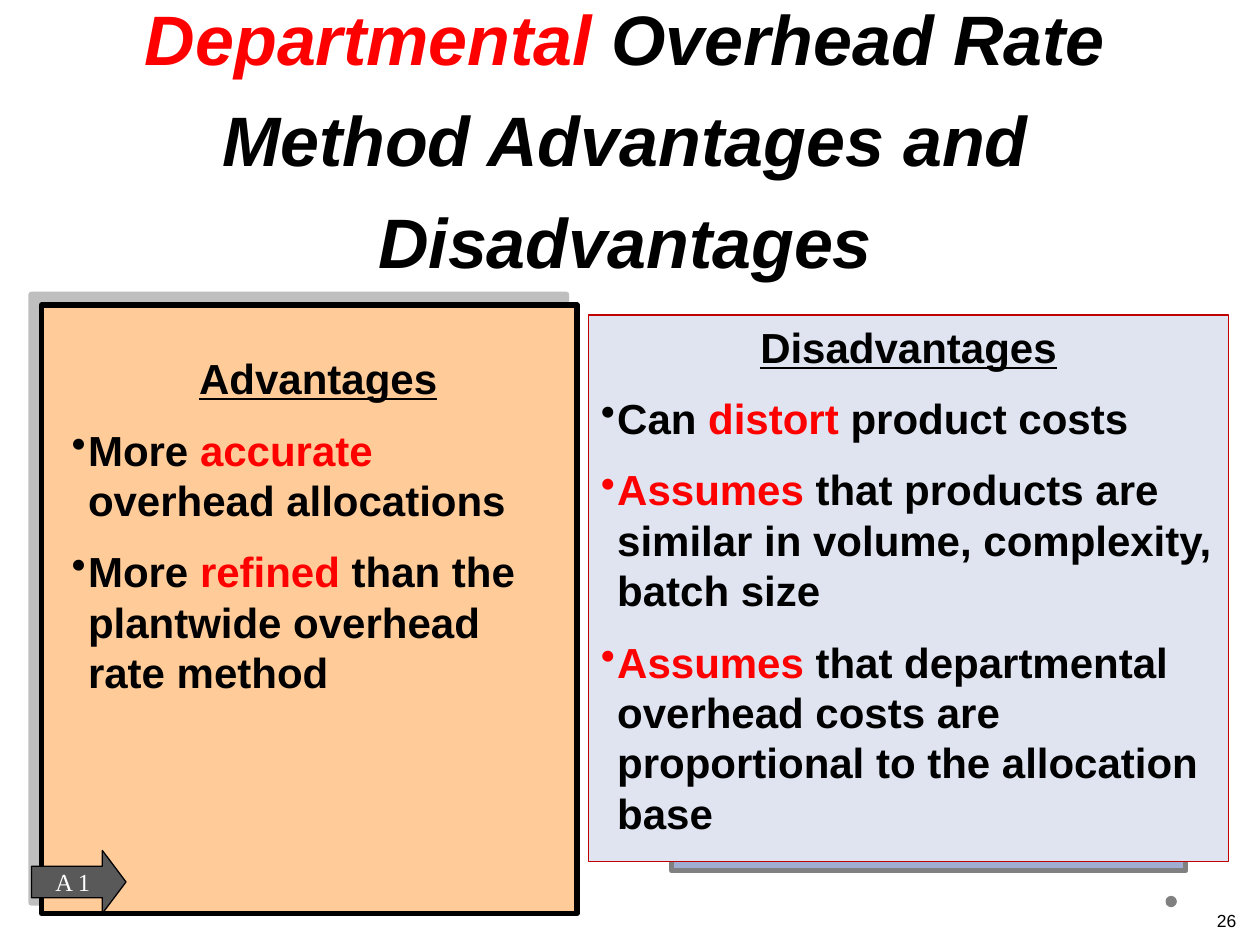
import pptx
import pptx.util
import pptx.dml.color
import pptx.enum.shapes
import pptx.enum.text
import pptx.oxml
import pptx.oxml.ns

Inches = pptx.util.Inches
Pt = pptx.util.Pt
RGBColor = pptx.dml.color.RGBColor
Shape = pptx.enum.shapes.MSO_SHAPE
Align = pptx.enum.text.PP_ALIGN
Anchor = pptx.enum.text.MSO_ANCHOR

BLACK = RGBColor(0, 0, 0)
WHITE = RGBColor(255, 255, 255)
RED = RGBColor(255, 0, 0)
GREY = RGBColor(0x80, 0x80, 0x80)
SLATE = RGBColor(0x59, 0x59, 0x59)
PEACH = RGBColor(0xFF, 0xCC, 0x99)
BLUE = RGBColor(0xA0, 0xAD, 0xD2)
PALE = RGBColor(0xDF, 0xE4, 0xF0)
MAROON = RGBColor(0xC0, 0, 0)


def write(para, runs, size=24, face="Arial", color=BLACK, bold=False,
          italic=False, under=False, align=Align.LEFT, lead=None, before=0,
          hang=0, bullet=False):
    props = para._p.get_or_add_pPr()
    if hang:
        props.set("marL", str(Inches(hang)))
        props.set("indent", str(-Inches(hang)))
    if bullet:
        char = pptx.oxml.parse_xml(
            f'<a:buChar {pptx.oxml.ns.nsdecls("a")} char="•"/>')
        props.append(char)
    para.alignment = align
    para.space_before = Pt(before)
    if lead:
        para.line_spacing = Pt(lead)
    for text, tint in runs:
        run = para.add_run()
        run.text = text
        font = run.font
        font.name, font.size = face, Pt(size)
        font.bold, font.italic, font.underline = bold, italic, under
        font.color.rgb = tint or color


class Deck:
    def __init__(self):
        self.show = pptx.Presentation()
        self.show.slide_width = Inches(10)
        self.show.slide_height = Inches(7.5)
        self.slide = self.show.slides.add_slide(self.show.slide_layouts[6])

    def shape(self, kind, box, fill, line=None, width=0.75):
        item = self.slide.shapes.add_shape(kind, *map(Inches, box))
        item.shadow.inherit = False
        item.fill.solid()
        item.fill.fore_color.rgb = fill
        if line is None:
            item.line.fill.background()
        else:
            item.line.color.rgb = line
            item.line.width = Pt(width)
        return item

    def shade(self, item, color, angle):
        effects = item._element.spPr.find(pptx.oxml.ns.qn("a:effectLst"))
        effects.append(pptx.oxml.parse_xml(
            f'<a:outerShdw {pptx.oxml.ns.nsdecls("a")} blurRad="0" '
            f'dist="{Pt(8.5)}" dir="{angle * 60000}" algn="ctr" '
            f'rotWithShape="0"><a:srgbClr val="{color}">'
            '<a:alpha val="50000"/></a:srgbClr></a:outerShdw>'))

    def text(self, box, runs, anchor=Anchor.TOP, foot=0.05, **style):
        frame = self.slide.shapes.add_textbox(*map(Inches, box)).text_frame
        frame.word_wrap = True
        frame.vertical_anchor = anchor
        frame.margin_bottom = Inches(foot)
        write(frame.paragraphs[0], runs, **style)

    def points(self, item, head, rows):
        frame = item.text_frame
        frame.word_wrap = True
        frame.vertical_anchor = Anchor.TOP
        style = dict(bold=True, lead=28.8, hang=0.13)
        write(frame.paragraphs[0], [(head, None)], under=True,
              align=Align.CENTER, **style)
        for runs in rows:
            write(frame.add_paragraph(), runs, before=12, bullet=True, **style)


def main():
    deck = Deck()
    deck.shape(Shape.OVAL, (9.25, 7.11, 0.09, 0.09), GREY)
    deck.text((0, 0.67, 9.92, 2.42),
              [("Departmental", RED),
               (" Overhead Rate Method Advantages and Disadvantages", None)],
              anchor=Anchor.BOTTOM, foot=0.85, size=40, bold=True,
              italic=True, align=Align.CENTER, lead=58)
    deck.shape(Shape.RECTANGLE, (5.33, 2.81, 4.08, 4.1), BLUE, GREY, 3)
    panel = deck.shape(Shape.RECTANGLE, (0.33, 2.42, 4.25, 4.83),
                       PEACH, BLACK, 3)
    deck.shade(panel, GREY, 225)

    pros = deck.slide.shapes.add_textbox(
        *map(Inches, (0.47, 2.75, 4.11, 2.93)))
    deck.points(pros, "Advantages", [
        [("More ", None), ("accurate ", RED), ("overhead allocations", None)],
        [("More ", None), ("refined", RED),
         (" than the plantwide overhead rate method", None)],
    ])
    cons = deck.shape(Shape.RECTANGLE, (4.67, 2.5, 5.08, 4.34), PALE, MAROON)
    deck.points(cons, "Disadvantages", [
        [("Can ", None), ("distort", RED), (" product costs", None)],
        [("Assumes", RED),
         (" that products are similar in volume, complexity, batch size",
          None)],
        [("Assumes", RED),
         (" that departmental overhead costs are proportional to the "
          "allocation base", None)],
    ])

    deck.text((9.33, 7.17, 0.58, 0.25), [("26", None)], size=10,
              align=Align.RIGHT)
    arrow = deck.shape(Shape.RIGHT_ARROW, (0.25, 6.75, 0.75, 0.5),
                       SLATE, BLACK)
    arrow.adjustments[0] = 0.5
    arrow.adjustments[1] = 0.375
    frame = arrow.text_frame
    frame.word_wrap = False
    frame.vertical_anchor = Anchor.MIDDLE
    write(frame.paragraphs[0], [("A 1", None)], size=14,
          face="Times New Roman", color=WHITE, align=Align.CENTER)
    deck.show.save("out.pptx")


if __name__ == "__main__":
    main()
